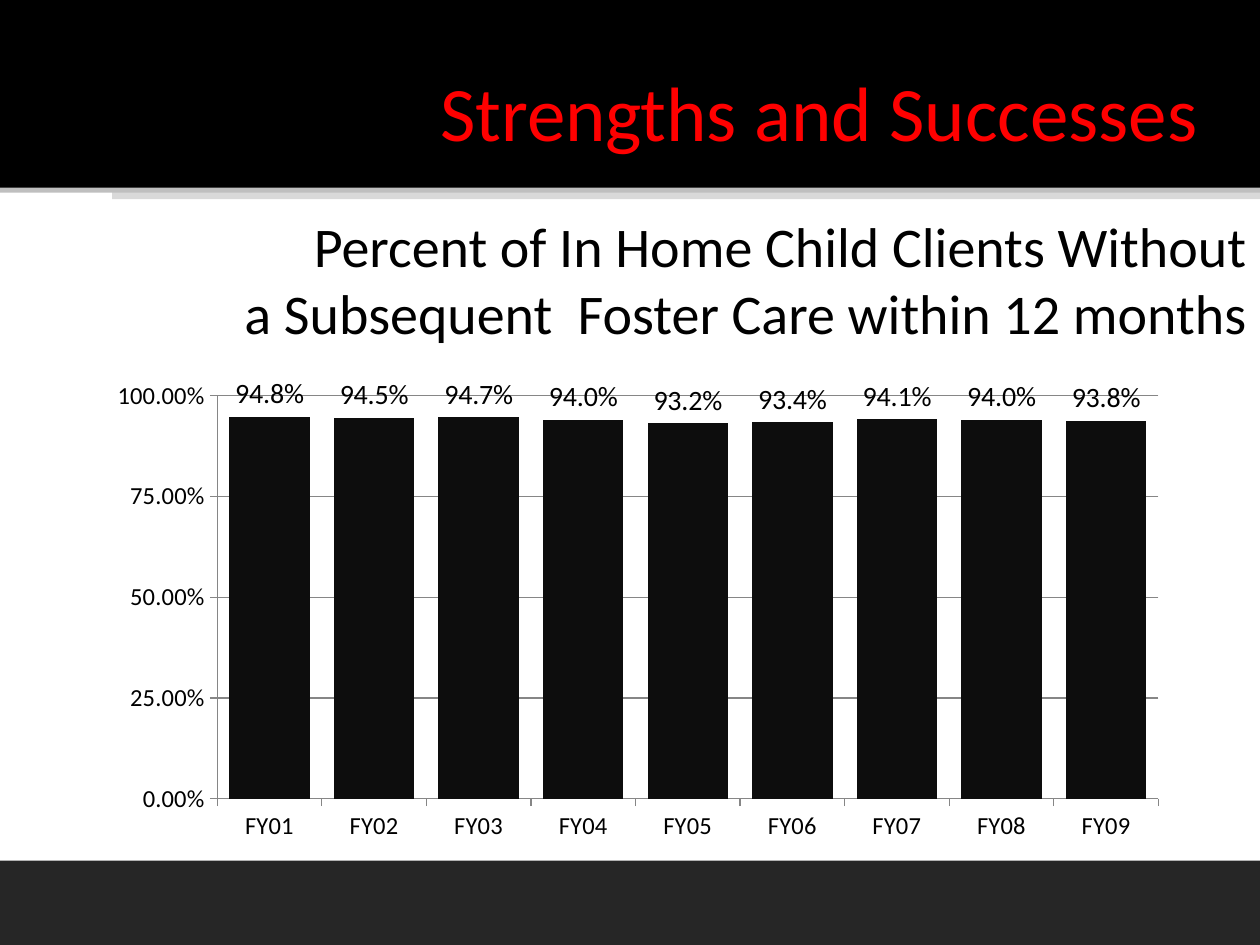
from dataclasses import dataclass

from lxml import etree
from pptx import Presentation
from pptx import util as u
from pptx.chart.data import CategoryChartData
from pptx.dml.color import RGBColor
from pptx.enum import chart as charts, shapes, text
from pptx.oxml import parse_xml
from pptx.oxml.ns import nsdecls

PX = 9144  # 100 px to the inch


@dataclass(frozen=True)
class Theme:
    font: str = "Calibri"
    black: str = "000000"
    title: str = "FF0000"
    bar: str = "0D0D0D"
    grid: str = "868686"
    title_size: int = 44
    heading_size: int = 32
    label_size: int = 16
    axis_size: int = 14


@dataclass(frozen=True)
class Area:
    left: int
    top: int
    width: int
    height: int

    def emu(self) -> list[u.Emu]:
        return [u.Emu(n * PX) for n in (self.left, self.top, self.width, self.height)]


@dataclass(frozen=True)
class Band:
    area: Area
    color: str


THEME = Theme()
BANDS = [
    Band(Area(89, 143, 911, 15), "D9D9D9"),
    Band(Area(0, 138, 1000, 15), "BFBFBF"),
    Band(Area(0, 0, 1000, 149), THEME.black),
    Band(Area(0, 683, 1000, 67), "262626"),
]
TITLE_AREA = Area(75, 25, 900, 125)
HEADING_AREA = Area(100, 150, 900, 142)
CHART_AREA = Area(59, 284, 900, 400)
HEADING = ["Percent of In Home Child Clients Without",
           "a Subsequent  Foster Care within 12 months"]
RATES = [0.948, 0.945, 0.947, 0.94, 0.932, 0.934, 0.941, 0.94, 0.938]
PLOT = {"x": 0.126, "y": 0.075, "w": 0.83, "h": 0.8}


def rgb(color: str) -> RGBColor:
    return RGBColor.from_string(color)


def set_font(font, size: int, color: str) -> None:
    font.name = THEME.font
    font.size = u.Pt(size)
    font.color.rgb = rgb(color)


def draw_band(page, band: Band) -> None:
    shape = page.shapes.add_shape(shapes.MSO_SHAPE.RECTANGLE, *band.area.emu())
    shape.shadow.inherit = False
    shape.fill.solid()
    shape.fill.fore_color.rgb = rgb(band.color)
    shape.line.fill.background()


def write_lines(box, lines: list[str], size: int, color: str) -> None:
    frame = box.text_frame
    frame.word_wrap = True
    frame.vertical_anchor = text.MSO_ANCHOR.MIDDLE
    frame.text = "\n".join(lines)
    for para in frame.paragraphs:
        para.alignment = text.PP_ALIGN.RIGHT
        set_font(para.font, size, color)


def place_plot(chart) -> None:
    """Fix the inner plot area as fractions of the chart."""
    modes = '<c:xMode val="edge"/><c:yMode val="edge"/>'
    sizes = "".join(f'<c:{key} val="{value}"/>' for key, value in PLOT.items())
    layout = parse_xml(
        f'<c:layout {nsdecls("c")}><c:manualLayout><c:layoutTarget val="inner"/>'
        f"{modes}{sizes}</c:manualLayout></c:layout>")
    plot_area = chart.plots[0]._element.getparent()
    for old in plot_area.findall(etree.QName(layout).text):
        plot_area.remove(old)
    plot_area.insert(0, layout)


def draw_chart(page) -> None:
    data = CategoryChartData()
    data.categories = [f"FY{year:02}" for year in range(1, len(RATES) + 1)]
    data.add_series("Series 1", RATES)
    chart = page.shapes.add_chart(
        charts.XL_CHART_TYPE.COLUMN_CLUSTERED, *CHART_AREA.emu(), data).chart
    chart.has_legend = False
    chart.has_title = False
    set_font(chart.font, THEME.axis_size, THEME.black)
    place_plot(chart)

    # Columns and their labels
    plot = chart.plots[0]
    plot.gap_width = 30
    plot.vary_by_categories = False
    fill = plot.series[0].format.fill
    fill.solid()
    fill.fore_color.rgb = rgb(THEME.bar)
    plot.has_data_labels = True
    labels = plot.data_labels
    labels.show_value = True
    labels.position = charts.XL_LABEL_POSITION.OUTSIDE_END
    labels.number_format = "0.0%"
    labels.number_format_is_linked = False
    set_font(labels.font, THEME.label_size, THEME.black)

    # Axes and gridlines
    scale = chart.value_axis
    scale.minimum_scale, scale.maximum_scale, scale.major_unit = 0, 1, 0.25
    scale.has_major_gridlines = True
    scale.tick_labels.number_format = "0.00%"
    scale.tick_labels.number_format_is_linked = False
    for axis in (chart.category_axis, scale):
        axis.major_tick_mark = charts.XL_TICK_MARK.OUTSIDE
        set_font(axis.tick_labels.font, THEME.axis_size, THEME.black)
    for part in (chart.category_axis, scale, scale.major_gridlines):
        part.format.line.color.rgb = rgb(THEME.grid)
        part.format.line.width = u.Pt(0.75)


def main() -> None:
    deck = Presentation()
    deck.slide_width, deck.slide_height = u.Inches(10), u.Inches(7.5)
    page = deck.slides.add_slide(deck.slide_layouts[5])

    # Background bands
    for band in BANDS:
        draw_band(page, band)

    # Heading and chart
    heading = page.shapes.add_textbox(*HEADING_AREA.emu())
    write_lines(heading, HEADING, THEME.heading_size, THEME.black)
    draw_chart(page)

    # Title, brought in front of the bands
    title = page.shapes.title
    title.left, title.top, title.width, title.height = TITLE_AREA.emu()
    write_lines(title, ["Strengths and Successes "], THEME.title_size, THEME.title)
    page.shapes.element.append(title.element)

    deck.save("out.pptx")


if __name__ == "__main__":
    main()
